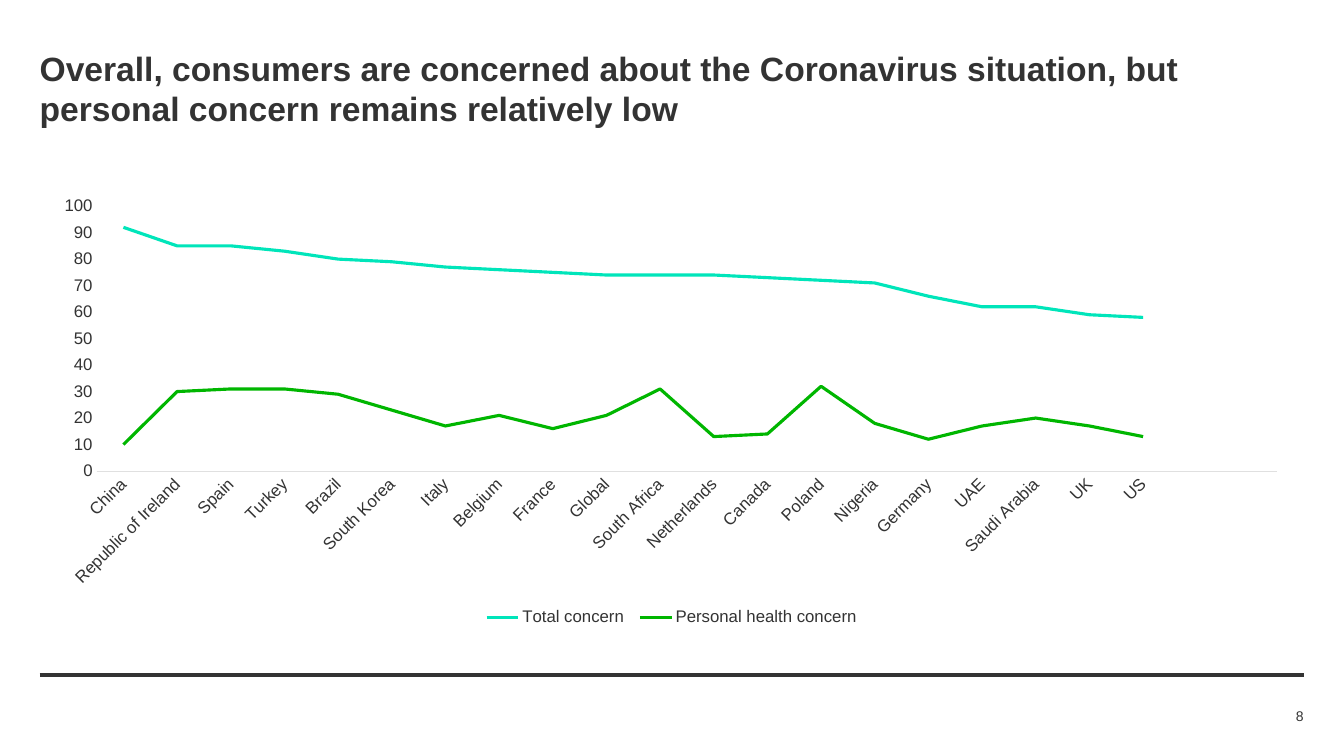
import lxml.etree
import pptx
import pptx.chart.data
import pptx.dml.color
import pptx.enum.chart
import pptx.enum.shapes
import pptx.enum.text
import pptx.oxml
import pptx.oxml.ns
import pptx.util
from pptx.util import Cm

# Content
TITLE = ("Overall, consumers are concerned about the Coronavirus situation, "
         "but personal concern remains relatively low")
PAGE_NUMBER = "8"
SERIES_NAMES = ("Total concern ", "Personal health concern")
CONCERN = [
    ("China", 92, 10),
    ("Republic of Ireland", 85, 30),
    ("Spain", 85, 31),
    ("Turkey", 83, 31),
    ("Brazil", 80, 29),
    ("South Korea", 79, 23),
    ("Italy", 77, 17),
    ("Belgium", 76, 21),
    ("France", 75, 16),
    ("Global", 74, 21),
    ("South Africa", 74, 31),
    ("Netherlands", 74, 13),
    ("Canada", 73, 14),
    ("Poland", 72, 32),
    ("Nigeria", 71, 18),
    ("Germany", 66, 12),
    ("UAE", 62, 17),
    ("Saudi Arabia", 62, 20),
    ("UK", 59, 17),
    ("US", 58, 13),
    ("", None, None),
    ("", None, None),
]


class Theme:
    font = "Arial"
    ink = pptx.dml.color.RGBColor.from_string("333333")
    axis = pptx.dml.color.RGBColor.from_string("E0E0E0")
    series = [pptx.dml.color.RGBColor.from_string(c) for c in ("00E5BA", "00B600")]
    title_size = 24
    chart_size = 12
    small_size = 10


# Layout
LEFT, WIDTH = Cm(1), Cm(31.86)
RULE_Y = Cm(17)
PLOT_SHARE = {"x": 0.045, "y": 0.04, "w": 0.934, "h": 0.6}

deck = pptx.Presentation()
deck.slide_width, deck.slide_height = Cm(33.87), Cm(19.05)
page = deck.slides.add_slide(deck.slide_layouts[6])


def style_font(font, size, bold=False):
    font.name, font.size, font.bold = Theme.font, pptx.util.Pt(size), bold
    font.color.rgb = Theme.ink


def add_text(text, left, top, width, height, size, bold=False,
             align=pptx.enum.text.PP_ALIGN.LEFT,
             anchor=pptx.enum.text.MSO_ANCHOR.TOP):
    frame = page.shapes.add_textbox(left, top, width, height).text_frame
    frame.word_wrap = True
    frame.vertical_anchor = anchor
    frame.margin_left = frame.margin_right = frame.margin_top = frame.margin_bottom = 0
    para = frame.paragraphs[0]
    para.alignment = align
    span = para.add_run()
    span.text = text
    style_font(span.font, size, bold)


# Footer rule
rule = page.shapes.add_connector(pptx.enum.shapes.MSO_CONNECTOR.STRAIGHT,
                                 LEFT, RULE_Y, LEFT + WIDTH, RULE_Y)
rule.line.color.rgb = Theme.ink
rule.line.width = pptx.util.Pt(3)
lxml.etree.SubElement(rule._element.spPr, pptx.oxml.ns.qn("a:effectLst"))

# Title
add_text(TITLE, LEFT, Cm(1.2), WIDTH, Cm(2.1), Theme.title_size, bold=True)

# Line chart
data = pptx.chart.data.CategoryChartData(number_format="General")
countries, *columns = zip(*CONCERN)
data.categories = countries
for name, values in zip(SERIES_NAMES, columns):
    data.add_series(name, values)
chart = page.shapes.add_chart(pptx.enum.chart.XL_CHART_TYPE.LINE,
                              LEFT, Cm(4.75), WIDTH, Cm(11.13), data).chart
style_font(chart.font, Theme.small_size)
chart.has_title = False
chart.has_legend = True
chart.legend.position = pptx.enum.chart.XL_LEGEND_POSITION.BOTTOM
chart.legend.include_in_layout = False
style_font(chart.legend.font, Theme.chart_size)

chart.plots[0].vary_by_categories = False
for series, color in zip(chart.plots[0].series, Theme.series):
    series.smooth = False
    series.marker.style = pptx.enum.chart.XL_MARKER_STYLE.NONE
    series.format.line.color.rgb = color
    series.format.line.width = pptx.util.Pt(2.25)

# Axes
for axis in (chart.category_axis, chart.value_axis):
    axis.has_major_gridlines = False
    axis.major_tick_mark = axis.minor_tick_mark = pptx.enum.chart.XL_TICK_MARK.NONE
    style_font(axis.tick_labels.font, Theme.chart_size)
chart.value_axis.minimum_scale, chart.value_axis.maximum_scale = 0, 100
chart.value_axis.major_unit = 10
chart.value_axis.format.line.fill.background()
chart.category_axis.format.line.color.rgb = Theme.axis
chart.category_axis.format.line.width = pptx.util.Pt(0.75)
label_body = chart.category_axis._element.find(".//" + pptx.oxml.ns.qn("a:bodyPr"))
label_body.set("rot", str(-45 * 60000))
label_body.set("vert", "horz")

# Fixed plot area inside the chart
plot_area = chart._chartSpace.chart.plotArea
for old_layout in plot_area.findall(pptx.oxml.ns.qn("c:layout")):
    plot_area.remove(old_layout)
marks = '<c:layoutTarget val="inner"/><c:xMode val="edge"/><c:yMode val="edge"/>'
marks += "".join(f'<c:{side} val="{share}"/>' for side, share in PLOT_SHARE.items())
plot_area.insert(0, pptx.oxml.parse_xml(
    f'<c:layout {pptx.oxml.ns.nsdecls("c")}><c:manualLayout>{marks}'
    '</c:manualLayout></c:layout>'))

# Page number
add_text(PAGE_NUMBER, Cm(30.15), Cm(17.75), Cm(2.7), Cm(0.56), Theme.small_size,
         align=pptx.enum.text.PP_ALIGN.RIGHT,
         anchor=pptx.enum.text.MSO_ANCHOR.MIDDLE)

deck.save("out.pptx")
